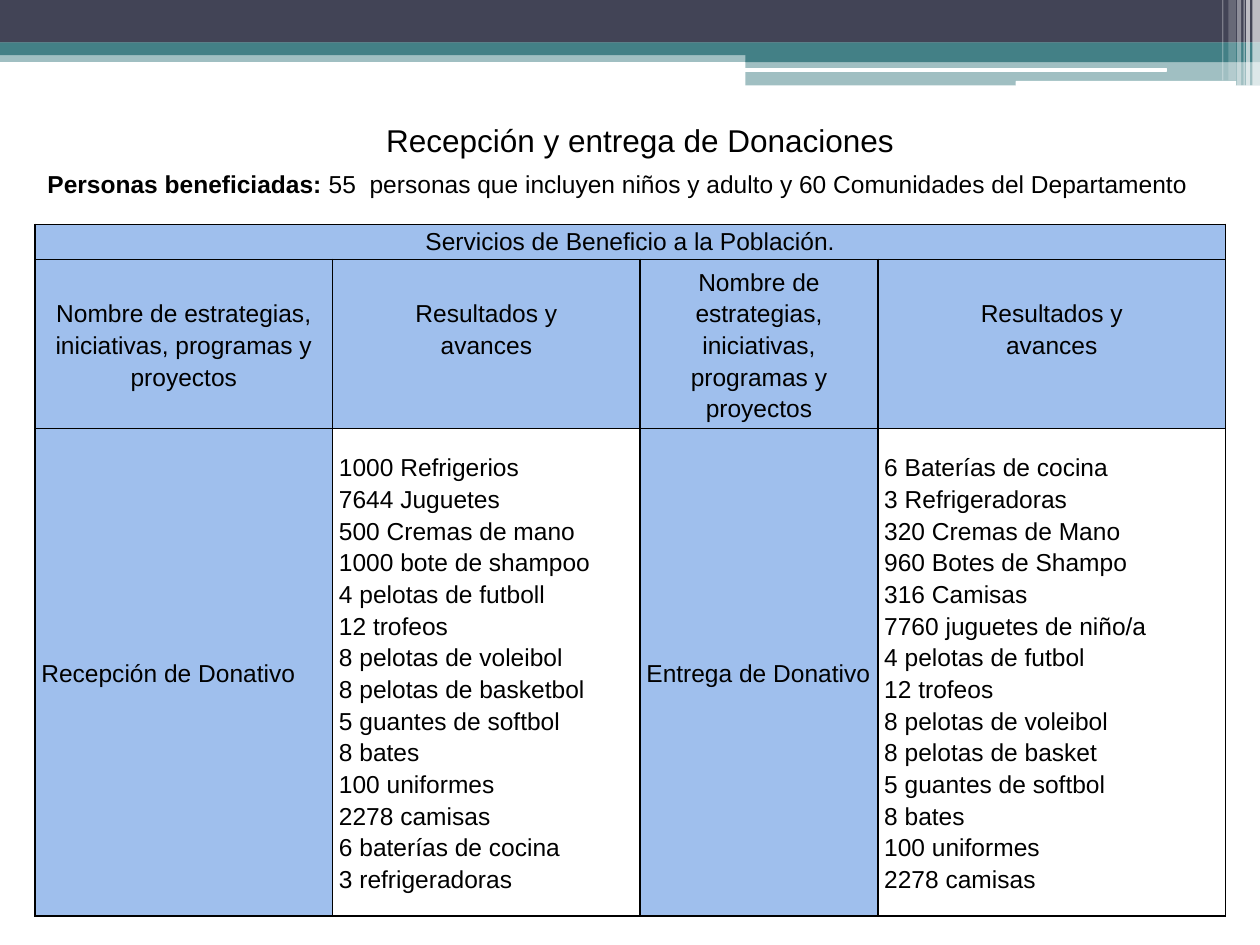
import pptx
import pptx.util
import pptx.dml.color
import pptx.enum.shapes
import pptx.enum.text
import pptx.oxml
import pptx.oxml.ns
from lxml import etree

Pt = pptx.util.Pt
RGBColor = pptx.dml.color.RGBColor
ALIGN = pptx.enum.text.PP_ALIGN
ANCHOR = pptx.enum.text.MSO_ANCHOR
SHAPES = pptx.enum.shapes.MSO_SHAPE
qn = pptx.oxml.ns.qn

NAVY = RGBColor(0x42, 0x44, 0x56)
TEAL = RGBColor(0x43, 0x80, 0x86)
WHITE = RGBColor(0xFF, 0xFF, 0xFF)
BLACK = RGBColor(0, 0, 0)
BLUE = RGBColor(0x9F, 0xBF, 0xED)
FONT = "Arial"

# Content
TITLE = "Recepción y entrega de Donaciones"
BENEFIT_LABEL = "Personas beneficiadas: "
BENEFIT_TEXT = "55  personas que incluyen niños y adulto y 60 Comunidades del Departamento"
TABLE_TITLE = "Servicios de Beneficio a la Población."
NAME_HEADER = ["Nombre de estrategias,", "iniciativas, programas y proyectos"]
RESULT_HEADER = ["Resultados y", "avances"]
RECEIVED = [
    "1000 Refrigerios", "7644 Juguetes", "500 Cremas de mano",
    "1000 bote de shampoo", "4 pelotas de futboll", "12 trofeos",
    "8 pelotas de voleibol", "8 pelotas de basketbol", "5 guantes de softbol",
    "8 bates", "100 uniformes", "2278 camisas", "6 baterías de cocina",
    "3 refrigeradoras",
]
DELIVERED = [
    "6 Baterías de cocina", "3 Refrigeradoras", "320 Cremas de Mano",
    "960 Botes de Shampo", "316 Camisas", "7760 juguetes de niño/a",
    "4 pelotas de futbol", "12 trofeos", "8 pelotas de voleibol",
    "8 pelotas de basket", "5 guantes de softbol", "8 bates",
    "100 uniformes", "2278 camisas",
]
ROWS = [
    [[TABLE_TITLE], [], [], []],
    [NAME_HEADER, RESULT_HEADER, NAME_HEADER, RESULT_HEADER],
    [["Recepción de Donativo"], RECEIVED, ["Entrega de Donativo"], DELIVERED],
]
COLUMN_WIDTHS = [170.1, 175.7, 135.9, 198.7]
ROW_HEIGHTS = [20, 93.6, 278.6]

# Header decoration: left, top, width, height, colour, opacity in percent
BANDS = [
    (0, 28.8, 720, 6.6, TEAL, 50),
    (0, 0, 720, 24.4, NAVY, 100),
    (0, 24.3, 720, 7.2, TEAL, 100),
    (426, 28.3, 294, 7.2, TEAL, 100),
    (426, 34.6, 294, 14.2, TEAL, 50),
]
WHITE_BARS = [(425.6, 38.9, 241.2, 2.2), (580.4, 46.2, 126, 2.9)]
# Vertical stripes: left, width, height, opacity
STRIPES = [
    (715.7, 4.3, 49, 65), (712.1, 2.2, 49, 65), (710.6, 0.7, 49, 60),
    (707, 2.2, 49, 40), (702, 4.3, 46, 20), (698.4, 0.7, 46, 30),
]


def add_block(slide, left, top, width, height, color, opacity=100, kind=SHAPES.RECTANGLE):
    shape = slide.shapes.add_shape(kind, Pt(left), Pt(top), Pt(width), Pt(height))
    shape.shadow.inherit = False
    shape.fill.solid()
    shape.fill.fore_color.rgb = color
    shape.line.fill.background()
    if opacity < 100:
        color_element = shape.fill._xPr.find(".//" + qn("a:srgbClr"))
        etree.SubElement(color_element, qn("a:alpha"), val=str(opacity * 1000))
    return shape


def style_run(run, size, bold=False):
    run.font.name = FONT
    run.font.size = Pt(size)
    run.font.bold = bold
    run.font.color.rgb = BLACK


def add_text(slide, left, top, width, height):
    text_frame = slide.shapes.add_textbox(Pt(left), Pt(top), Pt(width), Pt(height)).text_frame
    text_frame.word_wrap = True
    return text_frame


def set_borders(cell):
    properties = cell._tc.get_or_add_tcPr()
    for position, side in enumerate(("lnL", "lnR", "lnT", "lnB")):
        line = etree.Element(qn("a:" + side), w=str(Pt(1)))
        fill = etree.SubElement(line, qn("a:solidFill"))
        etree.SubElement(fill, qn("a:srgbClr"), val=str(BLACK))
        properties.insert(position, line)


def fill_cell(cell, lines, row, column):
    is_list = row == 2 and column % 2 == 1
    cell.margin_left = cell.margin_right = Pt(3.6)
    cell.margin_top = cell.margin_bottom = 0
    cell.vertical_anchor = ANCHOR.MIDDLE if row else ANCHOR.TOP
    if lines is RESULT_HEADER:
        cell.margin_bottom = Pt(18.5)  # lifts the heading by half a line
    if is_list:
        cell.fill.background()
    else:
        cell.fill.solid()
        cell.fill.fore_color.rgb = BLUE
    set_borders(cell)
    if not lines:
        return
    cell.text_frame.text = "\n".join(lines)
    for paragraph in cell.text_frame.paragraphs:
        paragraph.line_spacing = 1.15
        paragraph.alignment = ALIGN.CENTER if row < 2 else ALIGN.LEFT
        style_run(paragraph.runs[0], 14)


def main():
    presentation = pptx.Presentation()
    presentation.slide_width, presentation.slide_height = Pt(720), Pt(540)
    slide = presentation.slides.add_slide(presentation.slide_layouts[6])

    # Header decoration
    for band in BANDS:
        add_block(slide, *band)
    for bar in WHITE_BARS:
        add_block(slide, *bar, WHITE, kind=SHAPES.ROUNDED_RECTANGLE)
    for left, width, height, opacity in STRIPES:
        add_block(slide, left, 0, width, height, WHITE, opacity)

    # Title
    title = add_text(slide, 105.1, 54.7, 531.4, 38.9)
    title.margin_right = Pt(17.2)
    title.text = TITLE
    paragraph = title.paragraphs[0]
    paragraph.alignment = ALIGN.CENTER
    paragraph.line_spacing = 1.5
    paragraph.space_after = Pt(10)
    style_run(paragraph.runs[0], 18)

    # Table
    table = slide.shapes.add_table(
        len(ROWS), len(COLUMN_WIDTHS), Pt(20), Pt(128.2),
        Pt(sum(COLUMN_WIDTHS)), Pt(sum(ROW_HEIGHTS))).table
    table.first_row = table.horz_banding = False
    for column, width in zip(table.columns, COLUMN_WIDTHS):
        column.width = Pt(width)
    for row, height in zip(table.rows, ROW_HEIGHTS):
        row.height = Pt(height)
    table.cell(0, 0).merge(table.cell(0, len(COLUMN_WIDTHS) - 1))
    for row, cells in enumerate(ROWS):
        for column, lines in enumerate(cells):
            fill_cell(table.cell(row, column), lines, row, column)

    # Beneficiaries
    paragraph = add_text(slide, 20, 92.9, 680.4, 24.5).paragraphs[0]
    for text, bold in ((BENEFIT_LABEL, True), (BENEFIT_TEXT, False)):
        run = paragraph.add_run()
        run.text = text
        style_run(run, 14, bold)

    presentation.save("out.pptx")


if __name__ == "__main__":
    main()
